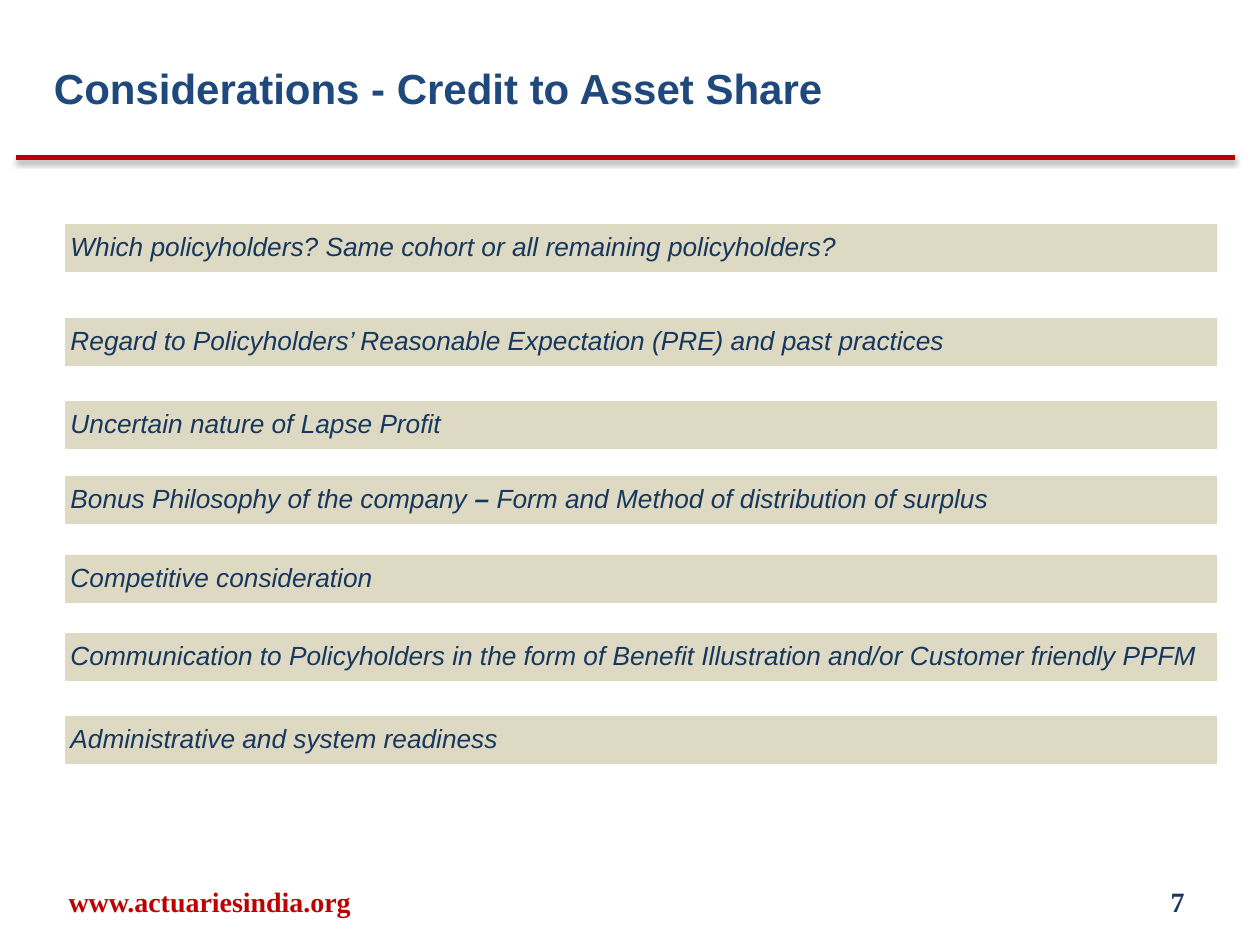
"""Build the slide on crediting lapse profit to asset share."""
from lxml.etree import fromstring
from pptx import Presentation
from pptx.dml.color import RGBColor
from pptx.enum.shapes import MSO_CONNECTOR, MSO_SHAPE
from pptx.enum.text import MSO_ANCHOR, PP_ALIGN
from pptx.oxml.ns import nsdecls
from pptx.util import Inches, Pt

COLORS = {
    "heading": "1F497D",
    "ink": "17375E",
    "accent": "C00000",
    "bar": "DDD9C3",
    "paper": "FFFFFF",
    "shadow": "000000",
}
HEADING = {"name": "Arial", "size": Pt(24), "bold": True}
BODY = {"name": "Arial", "size": Pt(15), "italic": True}
FOOTER = {"name": "Times New Roman", "size": Pt(16), "bold": True}

CONSIDERATIONS = [
    (0, ["Which policyholders? Same cohort or all remaining policyholders?"]),
    (0.75, ["Regard to Policyholders’ Reasonable Expectation (PRE) and past practices"]),
    (1.41, ["Uncertain nature of Lapse Profit"]),
    (2, ["Bonus Philosophy of the company ", "– ",
         "Form and Method of distribution of surplus"]),
    (2.63, ["Competitive consideration"]),
    (3.25, ["Communication to Policyholders in the form of Benefit Illustration "
            "and/or Customer friendly PPFM"]),
    (3.91, ["Administrative and system readiness"]),
]


def rgb(role):
    """Return the colour of a role."""
    return RGBColor.from_string(COLORS[role])


def apply_format(target, values):
    """Set each named attribute on the target."""
    for name, value in values.items():
        setattr(target, name, value)


def add_run(paragraph, wording, style, role):
    """Append a formatted run and return it."""
    run = paragraph.add_run()
    run.text = wording
    apply_format(run.font, style)
    run.font.color.rgb = rgb(role)
    return run


def add_label(slide, box, wording, style, role, align, frame_format):
    """Place a one-line text box."""
    frame = slide.shapes.add_textbox(*map(Inches, box)).text_frame
    apply_format(frame, {"word_wrap": True, **frame_format})
    line = frame.paragraphs[0]
    line.alignment = align
    add_run(line, wording, style, role)


def add_header(slide, left, top, width):
    """Place the heading and the shadowed rule beneath it."""
    add_label(slide, (left + 0.2, top, 8.42, 0.67),
              "Considerations - Credit to Asset Share", HEADING, "heading",
              PP_ALIGN.LEFT, {"vertical_anchor": MSO_ANCHOR.BOTTOM,
                              "margin_bottom": Inches(0.1)})
    rule_top = Inches(top + 0.92)
    rule = slide.shapes.add_connector(MSO_CONNECTOR.STRAIGHT, Inches(left), rule_top,
                                      Inches(left + width), rule_top)
    rule.line.color.rgb = rgb("accent")
    rule.line.width = Pt(3)
    rule._element.spPr.append(fromstring(
        f'<a:effectLst {nsdecls("a")}>'
        f'<a:outerShdw blurRad="{Pt(3.1)}" dist="{Pt(1.6)}" dir="5400000" rotWithShape="0">'
        f'<a:srgbClr val="{COLORS["shadow"]}"><a:alpha val="38000"/></a:srgbClr>'
        '</a:outerShdw></a:effectLst>'))


def add_considerations(slide, left, top, width, bar_height=0.41):
    """Place one filled bar for each consideration."""
    inset = Inches(0.06)
    for offset, parts in CONSIDERATIONS:
        bar = slide.shapes.add_shape(MSO_SHAPE.RECTANGLE, Inches(left), Inches(top + offset),
                                     Inches(width), Inches(bar_height))
        bar.shadow.inherit = False
        bar.fill.solid()
        bar.fill.fore_color.rgb = rgb("bar")
        bar.line.color.rgb = rgb("paper")
        bar.line.width = Pt(2)
        apply_format(bar.text_frame, {
            "word_wrap": True, "vertical_anchor": MSO_ANCHOR.MIDDLE,
            "margin_left": inset, "margin_right": inset,
            "margin_top": inset, "margin_bottom": inset})
        line = bar.text_frame.paragraphs[0]
        apply_format(line, {"alignment": PP_ALIGN.LEFT, "line_spacing": 0.9})
        for part in parts:
            add_run(line, part, {**BODY, "bold": part == "– "}, "ink")


def add_footer(slide, left, top, width, height=0.4):
    """Place the web address and the page number at the two ends."""
    middle = {"vertical_anchor": MSO_ANCHOR.MIDDLE}
    number_width = 2.33
    add_label(slide, (left, top, 3.17, height), "www.actuariesindia.org",
              FOOTER, "accent", PP_ALIGN.CENTER, middle)
    add_label(slide, (left + width - number_width, top, number_width, height), "7",
              FOOTER, "ink", PP_ALIGN.RIGHT, middle)


def main():
    """Build and save the slide."""
    deck = Presentation()
    apply_format(deck, {"slide_width": Inches(10), "slide_height": Inches(7.5)})
    slide = deck.slides.add_slide(deck.slide_layouts[6])
    add_header(slide, 0.13, 0.33, 9.67)
    add_considerations(slide, 0.5, 1.76, 9.17)
    add_footer(slide, 0.08, 6.95, 9.42)
    deck.save("out.pptx")


if __name__ == "__main__":
    main()
